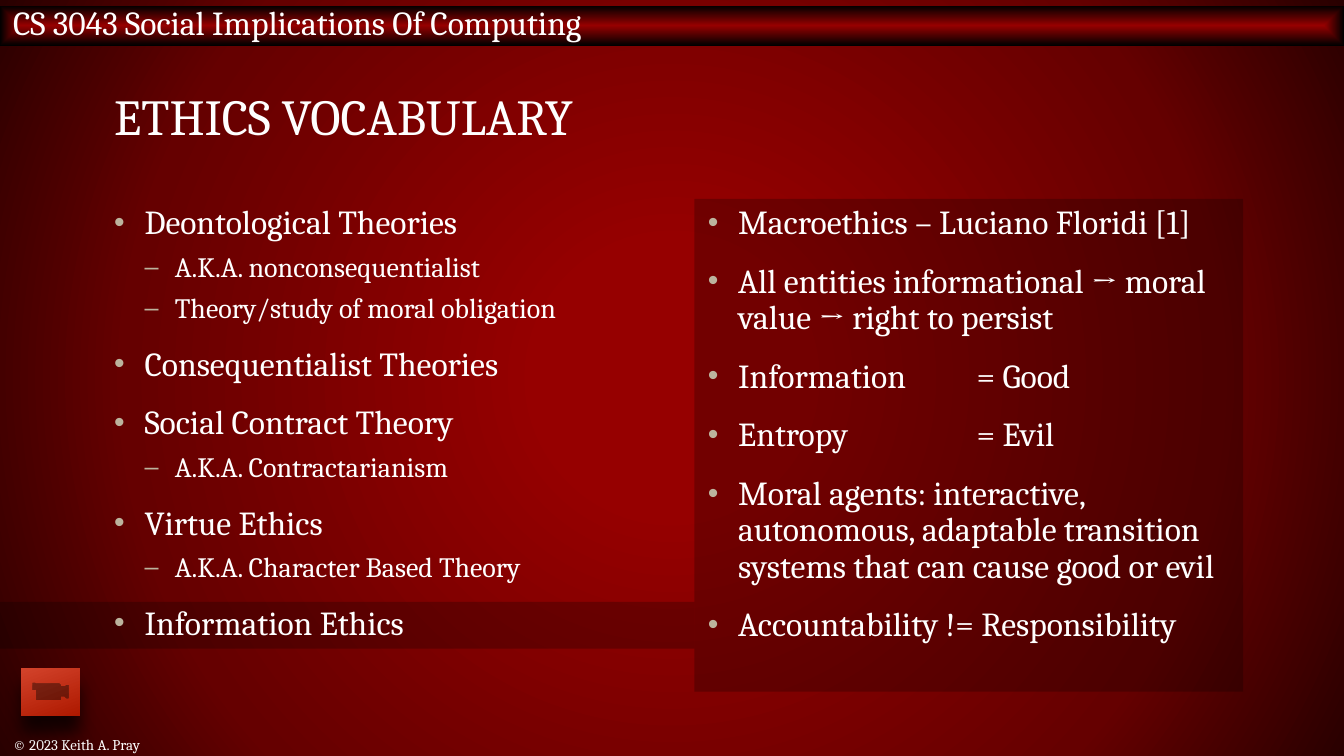
"""Build the ethics vocabulary slide of a computing and society course."""
from dataclasses import dataclass
from typing import Any, NamedTuple

from lxml import etree
from pptx import Presentation
from pptx.dml.color import RGBColor
from pptx.enum import shapes, text
from pptx.oxml import parse_xml
from pptx.oxml.ns import nsdecls, qn
from pptx.util import Pt


@dataclass(frozen=True)
class Theme:
    font: str = "Cambria"
    ink: str = "FFFFFF"
    bullet: str = "BCB49E"
    shade: str = "000000"
    shade_opacity: int = 24
    title: int = 27
    heading: int = 18
    detail: int = 15
    credit: int = 8
    backdrop: tuple = ((17, "960000"), (71, "650000"), (100, "290000"))
    banner: tuple = ((0, "960000"), (100, "000000"))
    button: tuple = ((0, "D3432B"), (100, "AE1900"))


class Box(NamedTuple):
    left: float
    top: float
    width: float
    height: float


class Level(NamedTuple):
    mark: str
    size: int
    indent: float
    before: int


class Item(NamedTuple):
    wording: str
    level: int = 0


THEME = Theme()
LEVELS = (Level("•", THEME.heading, 16.25, 12), Level("–", THEME.detail, 32.5, 6))
HANGING = 16.25
TAB_STOP = 144

PAGE = Box(0, 0, 720, 405)
BANNER = Box(0, 3, 720, 21.5)
TITLE = Box(54, 28.75, 612, 72)
THEORIES = Box(54, 106.5, 294, 264)
INFORMATION = THEORIES._replace(left=372)
HIGHLIGHT = Box(0, 322.5, INFORMATION.left, 25)
CREDIT = Box(0, 393, 438, 12)
MOVIE = Box(11.25, 358, 31.5, 25.5)

THEORY_ITEMS = (
    Item("Deontological Theories"),
    Item("A.K.A. nonconsequentialist", 1),
    Item("Theory/study of moral obligation", 1),
    Item("Consequentialist Theories"),
    Item("Social Contract Theory"),
    Item("A.K.A. Contractarianism", 1),
    Item("Virtue Ethics"),
    Item("A.K.A. Character Based Theory", 1),
    Item("Information Ethics"),
)
INFORMATION_ITEMS = (
    Item("Macroethics – Luciano Floridi [1]"),
    Item("All entities informational → moral value → right to persist"),
    Item("Information \t= Good"),
    Item("Entropy \t= Evil"),
    Item("Moral agents: interactive, autonomous, adaptable transition "
         "systems that can cause good or evil"),
    Item("Accountability != Responsibility"),
)


def apply(target: Any, values: dict) -> None:
    """Set each named attribute on the target."""
    for name, value in values.items():
        setattr(target, name, value)


def place(part: Any, box: Box) -> None:
    """Move and size a part in points."""
    apply(part, {side: Pt(length) for side, length in box._asdict().items()})


def set_frame(part: Any, anchor: Any, top: float = 3.6, bottom: float = 3.6) -> Any:
    """Format the text frame of a part and return it."""
    frame = part.text_frame
    apply(frame, {
        "word_wrap": True, "auto_size": text.MSO_AUTO_SIZE.NONE,
        "vertical_anchor": anchor, "margin_left": Pt(7.2), "margin_right": Pt(7.2),
        "margin_top": Pt(top), "margin_bottom": Pt(bottom),
    })
    return frame


def write(paragraph: Any, wording: str, size: int, spacing: float = 1.0, before: int = 0) -> None:
    """Write one left-aligned paragraph in the theme font."""
    apply(paragraph, {
        "alignment": text.PP_ALIGN.LEFT, "line_spacing": spacing,
        "space_before": Pt(before), "space_after": Pt(0),
    })
    run = paragraph.add_run()
    run.text = wording
    apply(run.font, {"name": THEME.font, "size": Pt(size), "bold": False})
    run.font.color.rgb = RGBColor.from_string(THEME.ink)


def add_bullet(paragraph: Any, level: Level, tabbed: bool) -> None:
    """Give a paragraph its hanging bullet and tab stop."""
    properties = paragraph._p.get_or_add_pPr()
    properties.set("marL", str(Pt(level.indent)))
    properties.set("indent", str(-Pt(HANGING)))
    colour = etree.SubElement(properties, qn("a:buClr"))
    etree.SubElement(colour, qn("a:srgbClr"), val=THEME.bullet)
    etree.SubElement(properties, qn("a:buSzPct"), val="90000")
    etree.SubElement(properties, qn("a:buFont"), typeface="Arial")
    etree.SubElement(properties, qn("a:buChar"), char=level.mark)
    if tabbed:
        tabs = etree.SubElement(properties, qn("a:tabLst"))
        etree.SubElement(tabs, qn("a:tab"), pos=str(Pt(TAB_STOP)), algn="l")


def fill_list(body: Any, box: Box, items: tuple[Item, ...]) -> None:
    """Place a body placeholder and write its bulleted items."""
    place(body, box)
    frame = set_frame(body, text.MSO_ANCHOR.TOP)
    for index, item in enumerate(items):
        paragraph = frame.add_paragraph() if index else frame.paragraphs[0]
        level = LEVELS[item.level]
        paragraph.level = item.level
        add_bullet(paragraph, level, "\t" in item.wording)
        write(paragraph, item.wording, level.size, 0.9, level.before if index else 0)


def fill_gradient(owner: Any, fill: Any, stops: tuple, direction: str) -> None:
    """Fill an owner with gradient stops along the given direction element."""
    fill.gradient()
    plain = owner.element.find(".//" + qn("a:gradFill"))
    marks = "".join(f'<a:gs pos="{position * 1000}"><a:srgbClr val="{colour}"/></a:gs>'
                    for position, colour in stops)
    plain.getparent().replace(plain, parse_xml(
        f'<a:gradFill {nsdecls("a")} rotWithShape="1"><a:gsLst>{marks}</a:gsLst>'
        f"{direction}</a:gradFill>"))


def from_centre(kind: str) -> str:
    """Return the direction element of a gradient that spreads from the centre."""
    return f'<a:path path="{kind}"><a:fillToRect l="50000" t="50000" r="50000" b="50000"/></a:path>'


def add_panel(slide: Any, box: Box, kind: Any = shapes.MSO_SHAPE.RECTANGLE) -> Any:
    """Add a preset shape with neither line nor shadow."""
    panel = slide.shapes.add_shape(kind, *map(Pt, box))
    panel.shadow.inherit = False
    panel.line.fill.background()
    return panel


def add_shade(slide: Any, box: Box) -> None:
    """Add a translucent dark panel."""
    panel = add_panel(slide, box)
    panel.fill.solid()
    panel.fill.fore_color.rgb = RGBColor.from_string(THEME.shade)
    colour = panel.element.spPr.find(".//" + qn("a:srgbClr"))
    etree.SubElement(colour, qn("a:alpha"), val=str(THEME.shade_opacity * 1000))


def add_movie_button(slide: Any) -> None:
    """Add the movie button with its soft drop shadow."""
    button = add_panel(slide, MOVIE, shapes.MSO_SHAPE.ACTION_BUTTON_MOVIE)
    fill_gradient(button, button.fill, THEME.button, f'<a:lin ang="{69 * 60000}" scaled="0"/>')
    shadow = etree.SubElement(
        button.element.spPr.find(qn("a:effectLst")), qn("a:outerShdw"),
        blurRad=str(Pt(9)), dist=str(Pt(9)), dir=str(90 * 60000), rotWithShape="0")
    colour = etree.SubElement(shadow, qn("a:srgbClr"), val=THEME.shade)
    etree.SubElement(colour, qn("a:alpha"), val="70000")


def main() -> None:
    """Build and save the slide."""
    deck = Presentation()
    apply(deck, {"slide_width": Pt(PAGE.width), "slide_height": Pt(PAGE.height)})
    slide = deck.slides.add_slide(deck.slide_layouts[3])
    title, theories, information = slide.placeholders
    fill_gradient(slide, slide.background.fill, THEME.backdrop, from_centre("circle"))

    banner = add_panel(slide, BANNER)
    fill_gradient(banner, banner.fill, THEME.banner, from_centre("shape"))
    course = set_frame(banner, text.MSO_ANCHOR.MIDDLE, top=0)
    write(course.paragraphs[0], "CS 3043 Social Implications Of Computing", THEME.heading)
    for box in (HIGHLIGHT, INFORMATION):
        add_shade(slide, box)

    for part in (title, information, theories):
        slide.shapes.element.append(part.element)
    place(title, TITLE)
    heading = set_frame(title, text.MSO_ANCHOR.MIDDLE)
    write(heading.paragraphs[0], "ETHICS VOCABULARY", THEME.title, 0.8)
    fill_list(information, INFORMATION, INFORMATION_ITEMS)
    fill_list(theories, THEORIES, THEORY_ITEMS)

    credit = set_frame(slide.shapes.add_textbox(*map(Pt, CREDIT)), text.MSO_ANCHOR.MIDDLE)
    write(credit.paragraphs[0], "© 2023 Keith A. Pray", THEME.credit)
    add_movie_button(slide)
    deck.save("out.pptx")


if __name__ == "__main__":
    main()
